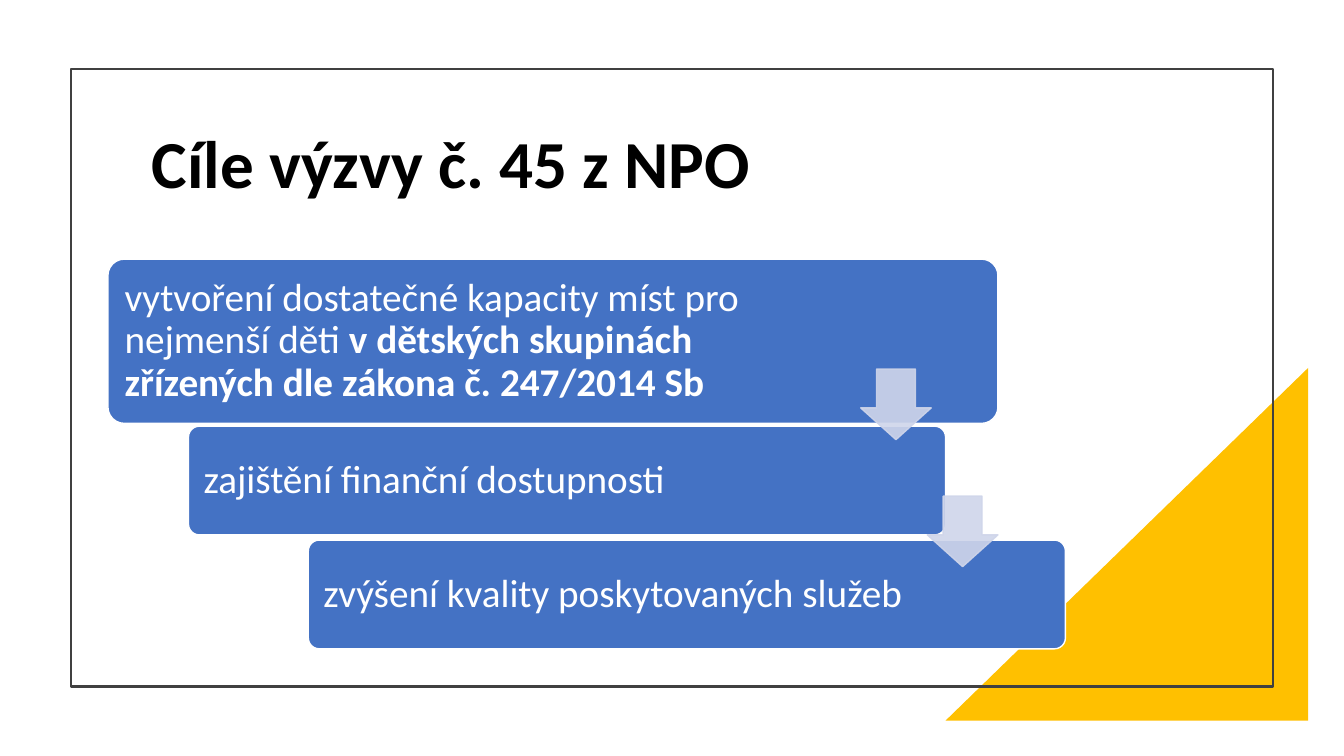
import pptx
import pptx.util
import pptx.dml.color
import pptx.enum.shapes
import pptx.enum.text
import pptx.oxml
import pptx.oxml.ns

Cm = pptx.util.Cm
Pt = pptx.util.Pt
RGBColor = pptx.dml.color.RGBColor
SHAPE = pptx.enum.shapes.MSO_SHAPE
ANCHOR = pptx.enum.text.MSO_ANCHOR
ALIGN = pptx.enum.text.PP_ALIGN

WHITE = RGBColor(0xFF, 0xFF, 0xFF)
BLACK = RGBColor(0x00, 0x00, 0x00)
BLUE = RGBColor(0x44, 0x72, 0xC4)
PALE_BLUE = RGBColor(0xCF, 0xD5, 0xEA)
YELLOW = RGBColor(0xFF, 0xC0, 0x00)
DARK_GREY = RGBColor(0x40, 0x40, 0x40)
FONT = "Calibri"

TITLE = "Cíle výzvy č. 45 z NPO"
GOALS = [
    ((2.72, 6.53, 22.43, 4.14), [
        ("vytvoření dostatečné kapacity míst pro nejmenší děti ", False),
        ("v dětských skupinách zřízených dle zákona č. 247/2014 Sb", True),
    ]),
    ((4.75, 10.74, 19.08, 2.74), [("zajištění finanční dostupnosti", False)]),
    ((7.77, 13.61, 19.08, 2.74), [("zvýšení kvality poskytovaných služeb", False)]),
]
ARROWS = [(21.69, 9.3), (23.37, 12.5)]
ARROW_SIZE = 1.78


def add_plain_shape(slide, kind, box, fill=None, line=None, line_width=1):
    shape = slide.shapes.add_shape(kind, *map(Cm, box))
    shape.shadow.inherit = False
    for paint, color in ((shape.fill, fill), (shape.line.fill, line)):
        if color is None:
            paint.background()
        else:
            paint.solid()
            paint.fore_color.rgb = color
    if line is not None:
        shape.line.width = Pt(line_width)
    return shape


def write_text(text_frame, runs, size, color):
    text_frame.word_wrap = True
    paragraph = text_frame.paragraphs[0]
    paragraph.alignment = ALIGN.LEFT
    paragraph.line_spacing = 0.9
    for text, bold in runs:
        run = paragraph.add_run()
        run.text = text
        run.font.name = FONT
        run.font.size = Pt(size)
        run.font.bold = bold
        run.font.color.rgb = color


def add_goal(slide, box, runs):
    shape = add_plain_shape(slide, SHAPE.ROUNDED_RECTANGLE, box, BLUE, WHITE)
    shape.adjustments[0] = 0.1
    text_frame = shape.text_frame
    text_frame.vertical_anchor = ANCHOR.MIDDLE
    text_frame.margin_left = text_frame.margin_top = text_frame.margin_bottom = Cm(0.3)
    text_frame.margin_right = Cm(3.6)
    write_text(text_frame, runs, 28, WHITE)


def add_arrow(slide, left, top):
    box = (left, top, ARROW_SIZE, ARROW_SIZE)
    arrow = add_plain_shape(slide, SHAPE.DOWN_ARROW, box, PALE_BLUE, PALE_BLUE)
    arrow.adjustments[0] = 0.55
    arrow.adjustments[1] = 0.45
    for color in arrow._element.spPr.iter(pptx.oxml.ns.qn("a:srgbClr")):
        alpha = pptx.oxml.parse_xml("<a:alpha %s val='90000'/>" % pptx.oxml.ns.nsdecls("a"))
        color.append(alpha)


def main():
    presentation = pptx.Presentation()
    presentation.slide_width = Cm(33.87)
    presentation.slide_height = Cm(19.05)
    slide = presentation.slides.add_slide(presentation.slide_layouts[6])

    triangle = add_plain_shape(slide, SHAPE.RIGHT_TRIANGLE, (23.83, 9.27, 9.14, 8.89), YELLOW)
    triangle._element.spPr.xfrm.set("flipH", "1")
    add_plain_shape(slide, SHAPE.RECTANGLE, (1.78, 1.73, 30.3, 15.57), None, DARK_GREY, 1.5)

    title = slide.shapes.add_textbox(Cm(3.58), Cm(2.92), Cm(22.43), Cm(4.5))
    title.text_frame.margin_top = Cm(0.38)
    write_text(title.text_frame, [(TITLE, True)], 48, BLACK)

    for box, runs in GOALS:
        add_goal(slide, box, runs)
    for left, top in ARROWS:
        add_arrow(slide, left, top)

    presentation.save("out.pptx")


if __name__ == "__main__":
    main()
